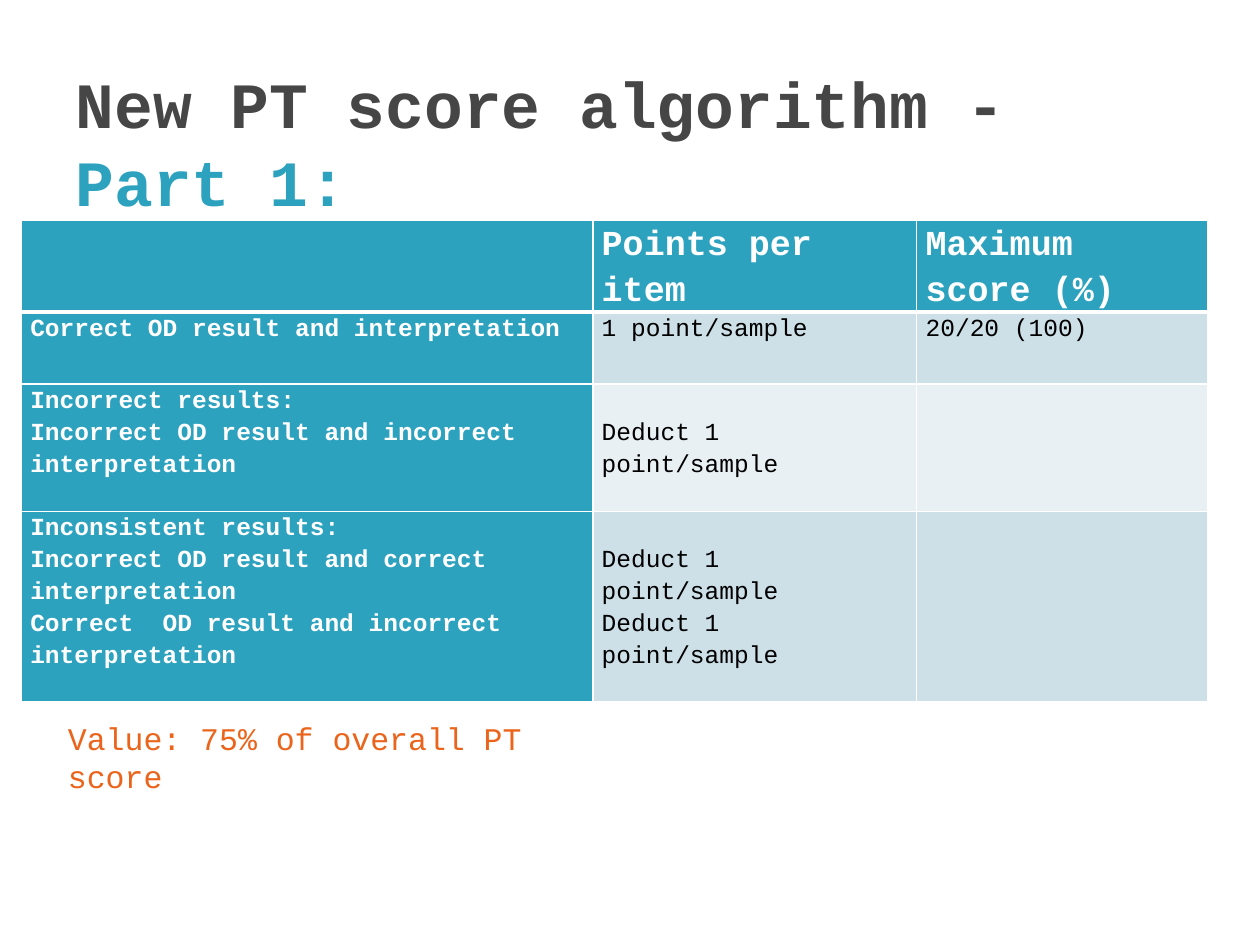
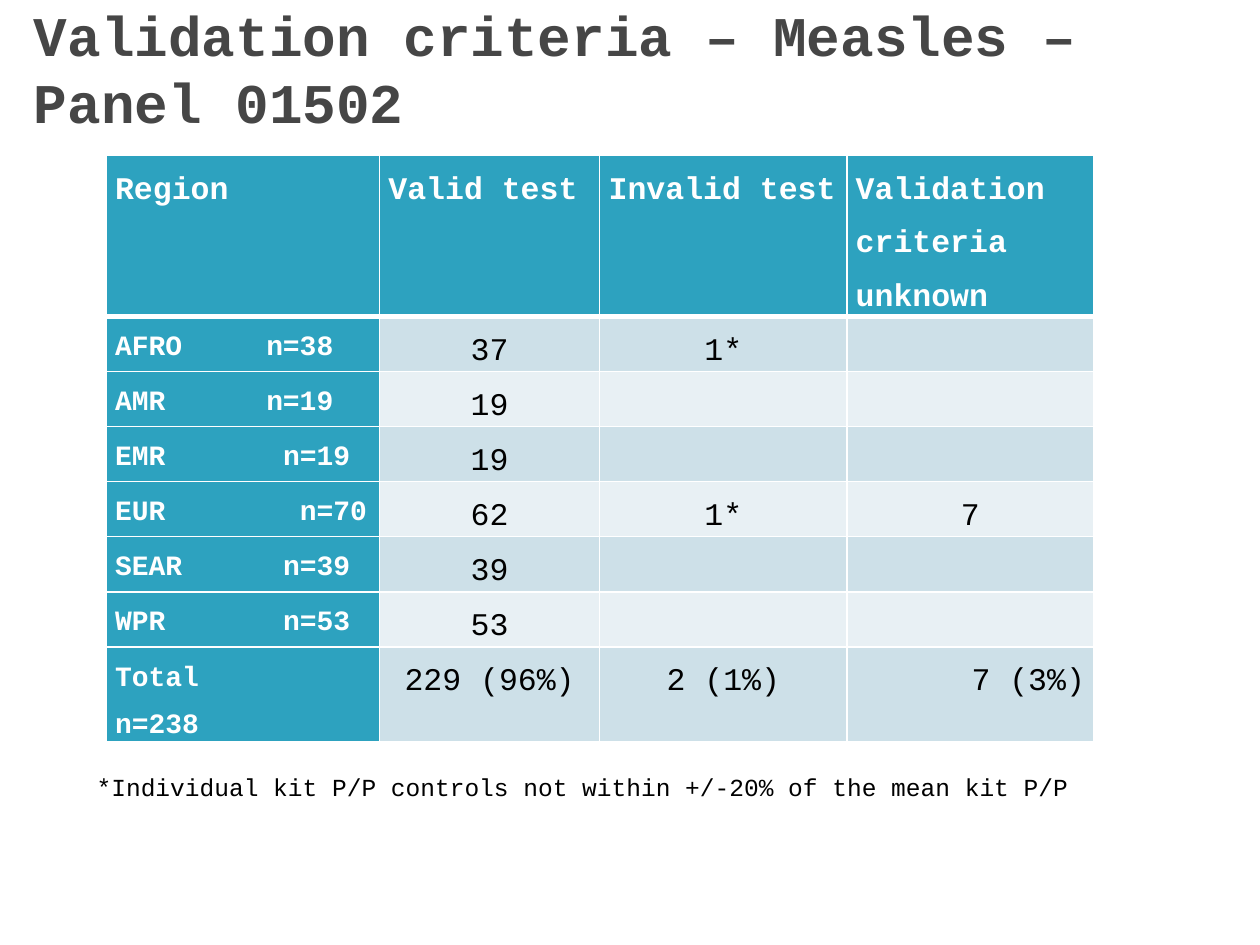
"""Build two proficiency-testing slides: the score algorithm and the validation criteria."""
import pptx
import pptx.dml.color
import pptx.enum.text
import pptx.oxml.ns
import pptx.util
from lxml import etree

Cm = pptx.util.Cm
ALIGN = pptx.enum.text.PP_ALIGN
FONT = "Courier New"
COLORS = {
    "heading": "464646",
    "accent": "2DA2BF",
    "highlight": "EB641B",
    "header_text": "FFFFFF",
    "rule": "FFFFFF",
    "body_text": "000000",
    "band_dark": "CDE0E8",
    "band_light": "E8F0F4",
}
MONO_WIDTH = 0.6
REGION_SIZE = 16

SCORE_ROWS = [
    ["", "Points per item", "Maximum score (%)"],
    ["Correct OD result and interpretation", "1 point/sample", "20/20 (100)"],
    ["Incorrect results:\nIncorrect OD result and incorrect interpretation",
     "Deduct 1 point/sample", ""],
    ["Inconsistent results:\nIncorrect OD result and correct interpretation\n"
     "Correct  OD result and incorrect interpretation",
     "Deduct 1 point/sample\nDeduct 1 point/sample", ""],
]
VALIDATION_ROWS = [
    ["Region", "Valid test", "Invalid test", "Validation criteria unknown"],
    ["AFRO\tn=38", "37", "1*", ""],
    ["AMR\tn=19", "19", "", ""],
    ["EMR\tn=19", "19", "", ""],
    ["EUR\tn=70", "62", "1*", "7"],
    ["SEAR\tn=39", "39", "", ""],
    ["WPR\tn=53", "53", "", ""],
    ["Total\nn=238", "229 (96%)", "2 (1%)", "7 (3%)"],
]
COUNT_COLUMNS = [9, 9, 10, 11, 10, 10]


def rgb(name):
    """Return the named colour."""
    return pptx.dml.color.RGBColor.from_string(COLORS[name])


def write(paragraph, text, size=18, color="body_text", bold=False,
          align=ALIGN.LEFT, spacing=1.0):
    """Add a formatted run to a paragraph."""
    paragraph.alignment = align
    paragraph.line_spacing = spacing
    run = paragraph.add_run()
    run.text = text
    run.font.name = FONT
    run.font.size = pptx.util.Pt(size)
    run.font.bold = bold
    run.font.color.rgb = rgb(color)


def place(shape, left, top, width, height):
    """Set the position and size of a shape in centimetres."""
    shape.left, shape.top = Cm(left), Cm(top)
    shape.width, shape.height = Cm(width), Cm(height)


def add_title(slide, box, size, *parts):
    """Fill the title placeholder with (text, colour) parts."""
    title = slide.shapes.title
    place(title, *box)
    frame = title.text_frame
    frame.auto_size = pptx.enum.text.MSO_AUTO_SIZE.NONE
    frame.vertical_anchor = pptx.enum.text.MSO_ANCHOR.MIDDLE
    frame.word_wrap = True
    for text, color in parts:
        write(frame.paragraphs[0], text, size=size, color=color, bold=True)


def add_note(slide, box, text, **text_format):
    """Add a wrapped text box with one paragraph."""
    frame = slide.shapes.add_textbox(*map(Cm, box)).text_frame
    frame.word_wrap = True
    write(frame.paragraphs[0], text, **text_format)


def add_tab_stop(paragraph, position):
    """Add a left tab stop to a paragraph."""
    properties = paragraph._p.get_or_add_pPr()
    stops = etree.SubElement(properties, pptx.oxml.ns.qn("a:tabLst"))
    etree.SubElement(stops, pptx.oxml.ns.qn("a:tab"), pos=str(int(position)), algn="l")


def add_bottom_rule(cell, points):
    """Draw a solid rule under a cell."""
    rule = etree.Element(pptx.oxml.ns.qn("a:lnB"), w=str(int(pptx.util.Pt(points))))
    fill = etree.SubElement(rule, pptx.oxml.ns.qn("a:solidFill"))
    etree.SubElement(fill, pptx.oxml.ns.qn("a:srgbClr"), val=COLORS["rule"])
    cell._tc.get_or_add_tcPr().insert(0, rule)


def fill_cell(cell, text, fill, **text_format):
    """Colour a cell and write its lines."""
    cell.fill.solid()
    cell.fill.fore_color.rgb = rgb(fill)
    cell.margin_left = cell.margin_right = Cm(0.18)
    cell.margin_top = cell.margin_bottom = 0
    if not text:
        return
    for index, line in enumerate(text.split("\n")):
        frame = cell.text_frame
        paragraph = frame.add_paragraph() if index else frame.paragraphs[0]
        write(paragraph, line, **text_format)


def add_grid(slide, left, top, widths, heights, rows, head_size, label_size,
             value_size, spacing, value_align=ALIGN.LEFT):
    """Add a banded table with a header row and a label column."""
    table = slide.shapes.add_table(len(rows), len(widths), Cm(left), Cm(top),
                                   Cm(sum(widths)), Cm(sum(heights))).table
    table.first_col = True
    for column, width in zip(table.columns, widths):
        column.width = Cm(width)
    for row_index, (values, height) in enumerate(zip(rows, heights)):
        table.rows[row_index].height = Cm(height)
        band = "band_dark" if row_index % 2 else "band_light"
        for column_index, text in enumerate(values):
            cell = table.cell(row_index, column_index)
            if row_index == 0 or column_index == 0:
                fill_cell(cell, text, "accent", color="header_text", bold=True,
                          size=label_size if row_index else head_size, spacing=spacing)
            else:
                fill_cell(cell, text, band, size=value_size, align=value_align,
                          spacing=spacing)
            if row_index == 0:
                add_bottom_rule(cell, 3)
    return table


def build_score_slide(slide):
    """Lay out the score algorithm."""
    add_title(slide, (1.27, 1.27, 22.43, 3.18), 36.9,
              ("New PT score algorithm - ", "heading"), ("Part 1:", "accent"))
    scores = add_grid(slide, 0.43, 4.45, [11.52, 6.53, 5.87], [1.81, 1.45, 2.57, 3.84],
                      SCORE_ROWS, head_size=20, label_size=14, value_size=14, spacing=1.15)
    for deduction_row in (2, 3):
        scores.cell(deduction_row, 1).margin_top = Cm(0.64)
    add_note(slide, (1.12, 14.38, 9.96, 1.02), "Value: 75% of overall PT score",
             color="highlight")


def build_validation_slide(slide):
    """Lay out the validation criteria by region."""
    add_title(slide, (0.43, 0.2, 24.97, 2.34), 32,
              ("Validation criteria – Measles – Panel 01502", "heading"))
    regions = add_grid(slide, 2.14, 3.13, [5.51, 4.44, 4.98, 4.98],
                       [3.25] + [1.11] * 6 + [1.9], VALIDATION_ROWS, head_size=18,
                       label_size=REGION_SIZE, value_size=18, spacing=1.5,
                       value_align=ALIGN.CENTER)
    for row_index, characters in enumerate(COUNT_COLUMNS, start=1):
        add_tab_stop(regions.cell(row_index, 0).text_frame.paragraphs[0],
                     pptx.util.Pt(characters * MONO_WIDTH * REGION_SIZE))
    regions.cell(7, 3).text_frame.paragraphs[0].alignment = ALIGN.RIGHT
    add_note(slide, (1.7, 15.44, 20.52, 0.86),
             "*Individual kit P/P controls not within +/-20% of the mean kit P/P", size=14)


def main():
    """Build and save the presentation."""
    deck = pptx.Presentation()
    deck.slide_width, deck.slide_height = Cm(25.4), Cm(19.05)
    for build in (build_score_slide, build_validation_slide):
        build(deck.slides.add_slide(deck.slide_layouts.get_by_name("Title Only")))
    deck.save("out.pptx")


if __name__ == "__main__":
    main()
